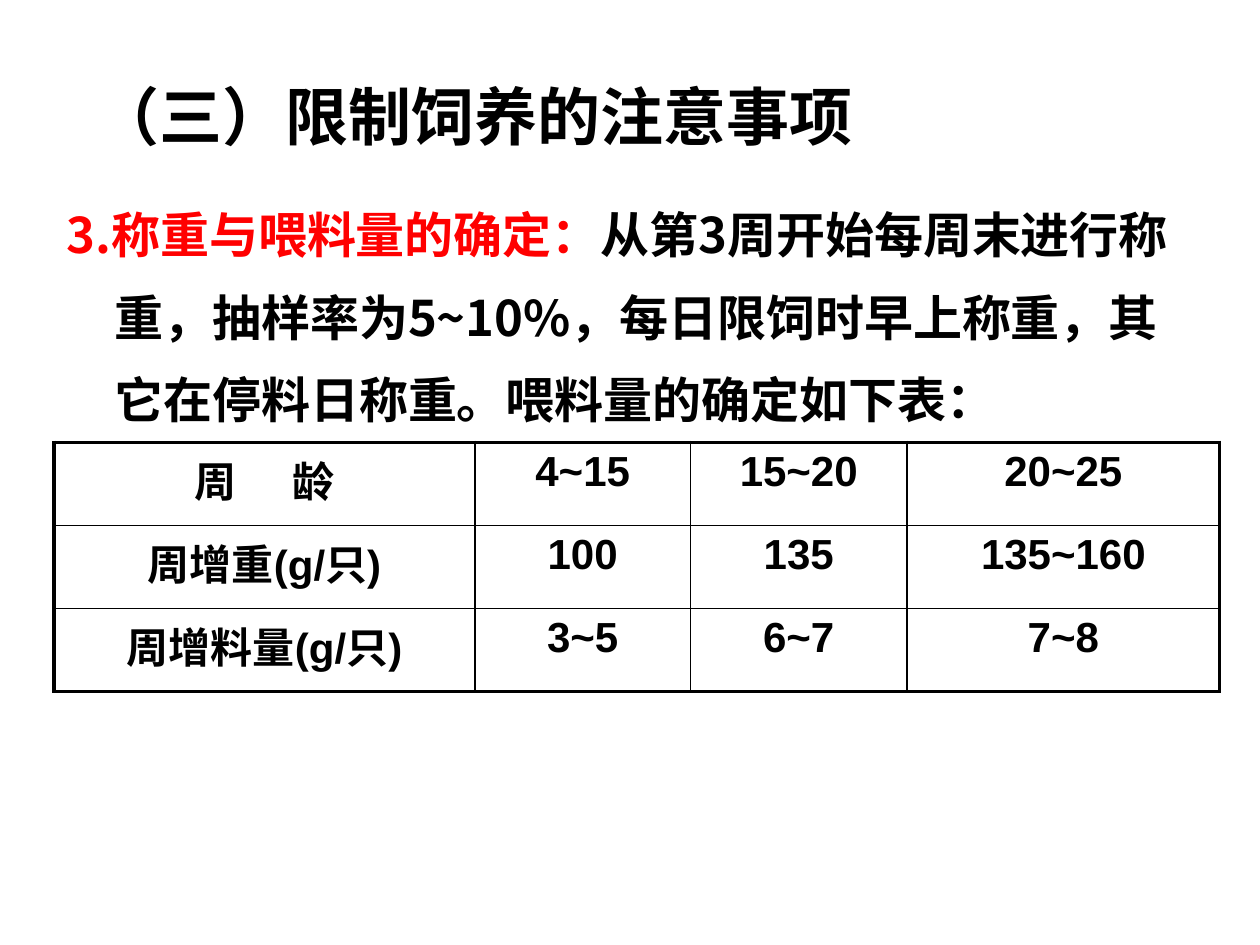
from lxml import etree
from pptx import Presentation
from pptx.dml.color import RGBColor
from pptx.enum.text import MSO_ANCHOR, PP_ALIGN
from pptx.oxml.ns import qn
from pptx.util import Inches, Pt

CENTER, LEFT = PP_ALIGN.CENTER, PP_ALIGN.LEFT
TOP, MIDDLE = MSO_ANCHOR.TOP, MSO_ANCHOR.MIDDLE
BLACK, RED = "000000", "FF0000"
LATIN, CHINESE = "Arial", "Noto Sans CJK SC"
THIN, THICK = 1, 2.25

HEADING = "（三）限制饲养的注意事项"
TOPIC = "3.称重与喂料量的确定："
DETAIL = (
    "从第3周开始每周末进行称重，抽样率为5~10%，每日限饲时早上称重，"
    "其它在停料日称重。喂料量的确定如下表："
)
WEEK_GAP = 26.7
FEED_ROWS = [
    [[("周", 0), (" ", WEEK_GAP), ("龄", 0)], "4~15", "15~20", "20~25"],
    ["周增重(g/只)", "100", "135", "135~160"],
    ["周增料量(g/只)", "3~5", "6~7", "7~8"],
]
COLUMN_WIDTHS = [3.34, 1.71, 1.72, 2.48]
ROW_HEIGHT = 0.66


def color(value):
    return RGBColor.from_string(value)


class SlideWriter:
    def __init__(self, slide):
        self.slide = slide

    def span(self, para, text, size, font=LATIN, ink=BLACK, spacing=0):
        span = para.add_run()
        span.text = text
        formats = {"name": font, "size": Pt(size), "bold": True}
        for name, value in formats.items():
            setattr(span.font, name, value)
        span.font.color.rgb = color(ink)
        properties = span.font._element
        east_asian = etree.Element(qn("a:ea"), typeface=CHINESE)
        properties.find(qn("a:latin")).addnext(east_asian)
        if spacing:
            properties.set("spc", str(round(spacing * 100)))

    def text_box(self, left, top, width, height, anchor=TOP):
        box = self.slide.shapes.add_textbox(
            Inches(left), Inches(top), Inches(width), Inches(height)
        )
        formats = {"word_wrap": True, "vertical_anchor": anchor}
        for name, value in formats.items():
            setattr(box.text_frame, name, value)
        para = box.text_frame.paragraphs[0]
        para.alignment = LEFT
        return para

    def hanging_indent(self, para, indent):
        properties = para._p.get_or_add_pPr()
        properties.set("marL", str(Inches(indent)))
        properties.set("indent", str(-Inches(indent)))

    def cell_borders(self, cell, widths):
        properties = cell._tc.get_or_add_tcPr()
        for index, (side, width) in enumerate(widths.items()):
            line = etree.Element(qn(f"a:ln{side}"), w=str(Pt(width)))
            fill = etree.SubElement(line, qn("a:solidFill"))
            etree.SubElement(fill, qn("a:srgbClr"), val=BLACK)
            properties.insert(index, line)

    def table(self, left, top, rows, widths, row_height, size):
        last_row, last_column = len(rows) - 1, len(widths) - 1
        table = self.slide.shapes.add_table(
            len(rows), len(widths), Inches(left), Inches(top),
            Inches(sum(widths)), Inches(row_height * len(rows)),
        ).table
        for name in ("first_row", "horz_banding"):
            setattr(table, name, False)
        for column, width in zip(table.columns, widths):
            column.width = Inches(width)
        for y, values in enumerate(rows):
            table.rows[y].height = Inches(row_height)
            for x, value in enumerate(values):
                cell = table.cell(y, x)
                cell.fill.background()
                self.cell_borders(cell, {
                    "L": THICK if x == 0 else THIN,
                    "R": THICK if x == last_column else THIN,
                    "T": THICK if y == 0 else THIN,
                    "B": THICK if y == last_row else THIN,
                })
                para = cell.text_frame.paragraphs[0]
                para.alignment = CENTER
                parts = [(value, 0)] if isinstance(value, str) else value
                for text, spacing in parts:
                    self.span(para, text, size, spacing=spacing)


def main():
    deck = Presentation()
    deck.slide_width, deck.slide_height = Inches(10), Inches(7.5)
    page = SlideWriter(deck.slides.add_slide(deck.slide_layouts[6]))

    title = page.text_box(0.67, 0.52, 6.85, 0.79, MIDDLE)
    page.span(title, HEADING, 36)

    body = page.text_box(0.43, 1.39, 9.21, 1.97)
    page.hanging_indent(body, 0.38)
    body.line_spacing = 1.4
    for text, ink in ((TOPIC, RED), (DETAIL, BLACK)):
        page.span(body, text, 28, CHINESE, ink)

    page.table(0.43, 3.51, FEED_ROWS, COLUMN_WIDTHS, ROW_HEIGHT, 24)
    deck.save("out.pptx")


if __name__ == "__main__":
    main()
